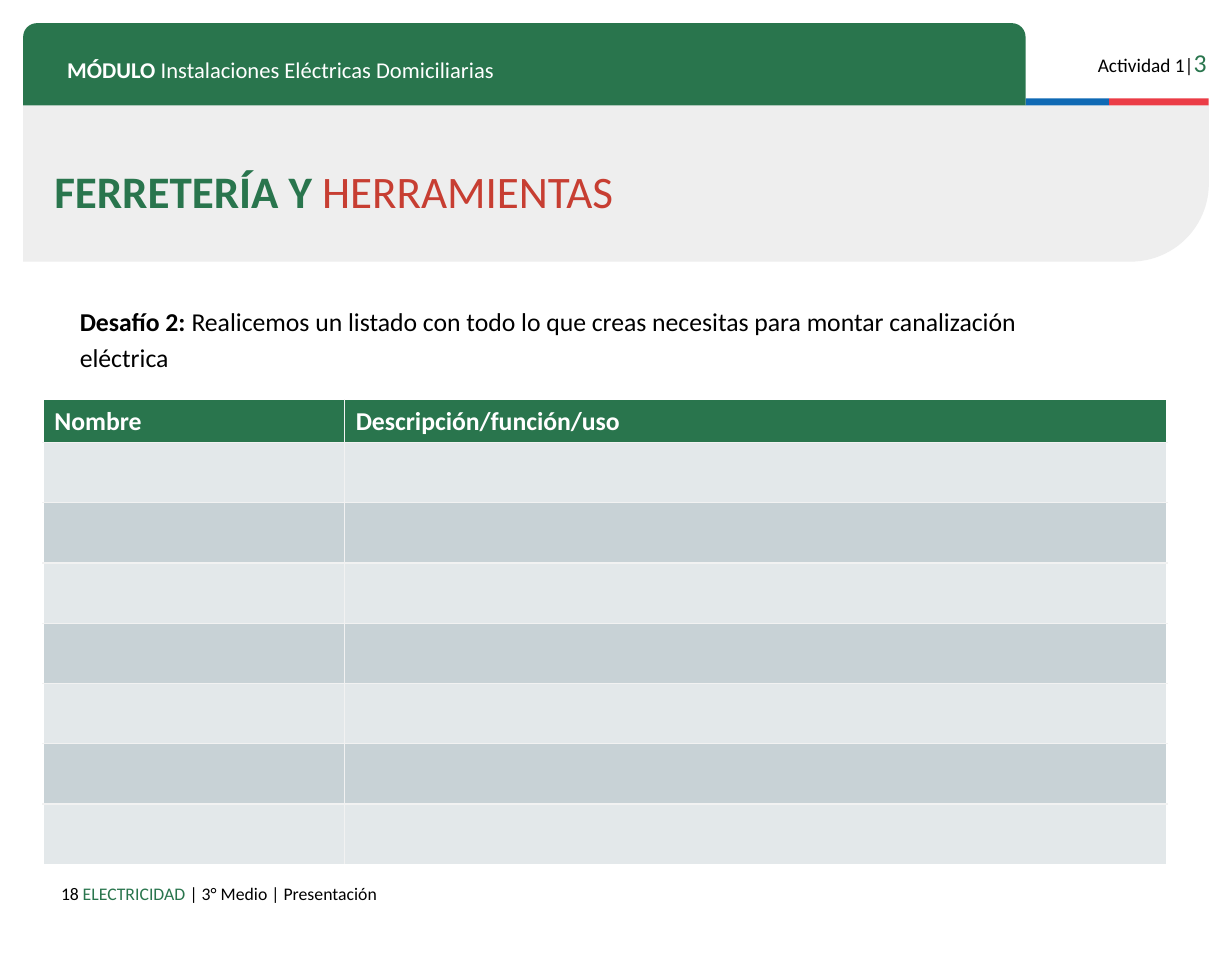
from lxml.etree import SubElement
from pptx import Presentation
from pptx.dml.color import RGBColor
from pptx.enum.shapes import MSO_SHAPE as SHAPE
from pptx.enum.text import MSO_ANCHOR as ANCHOR, PP_ALIGN as ALIGN
from pptx.oxml.ns import qn
from pptx.util import Inches, Pt

GREEN = RGBColor(0x29, 0x75, 0x4D)
RED = RGBColor(0xC7, 0x3E, 0x32)
STRIPE_BLUE = RGBColor(0x0F, 0x69, 0xB4)
STRIPE_RED = RGBColor(0xEB, 0x3C, 0x46)
PANEL = RGBColor(0xEE, 0xEE, 0xEE)
BAND_LIGHT = RGBColor(0xE3, 0xE8, 0xEA)
BAND_DARK = RGBColor(0xC8, 0xD2, 0xD6)
RULE = RGBColor(0xF2, 0xF2, 0xF2)
WHITE = RGBColor(255, 255, 255)
BLACK = RGBColor(0, 0, 0)

WIDTH, HEIGHT = Inches(10.63), Inches(8.27)
LEFT, TABLE_LEFT, FOOTER_TOP = 1.88, 3.48, 91.05
COLUMNS = (24.46, 66.79)
ROWS = (4.47,) + (6.29,) * 7
HEADINGS = ("Nombre", "Descripción/función/uso")


def col(share):
    """Turn a percentage of the slide width into a length."""
    return round(WIDTH * share / 100)


def row(share):
    """Turn a percentage of the slide height into a length."""
    return round(HEIGHT * share / 100)


def place(x, y, w, h):
    """Return left, top, width and height from percentages."""
    return col(x), row(y), col(w), row(h)


def apply(target, values):
    """Set each attribute named in a dict."""
    for name, value in values.items():
        setattr(target, name, value)


def add_run(p, text, size, color, bold=False):
    """Append a formatted run to a paragraph."""
    r = p.add_run()
    r.text = text
    apply(r.font, {"name": "Calibri", "size": Pt(size), "bold": bold})
    r.font.color.rgb = color


def add_block(s, kind, box, color, adjustments=()):
    """Draw a flat filled shape without outline."""
    sp = s.shapes.add_shape(kind, *place(*box))
    sp.shadow.inherit = False
    sp.fill.solid()
    sp.fill.fore_color.rgb = color
    sp.line.fill.background()
    for i, value in enumerate(adjustments):
        sp.adjustments[i] = value
    return sp


def add_text(s, box, runs, anchor=ANCHOR.TOP, **layout):
    """Write one paragraph of formatted runs in a text box."""
    tf = s.shapes.add_textbox(*place(*box)).text_frame
    sides = ("left", "top", "right", "bottom")
    apply(tf, {f"margin_{side}": Inches(0.1) for side in sides})
    apply(tf, {"word_wrap": True, "vertical_anchor": anchor})
    p = tf.paragraphs[0]
    apply(p, layout)
    for run in runs:
        add_run(p, *run)


def add_border(cell, side):
    """Rule one side of a cell."""
    ln = SubElement(cell._tc.get_or_add_tcPr(), qn(f"a:ln{side}"), w=str(Pt(1)))
    fill = SubElement(ln, qn("a:solidFill"))
    SubElement(fill, qn("a:srgbClr"), val=str(RULE))


def add_list_table(s):
    """Build the banded table to be filled in by students."""
    box = place(TABLE_LEFT, 41.72, sum(COLUMNS), sum(ROWS))
    table = s.shapes.add_table(len(ROWS), len(COLUMNS), *box).table
    for i, share in enumerate(COLUMNS):
        table.columns[i].width = col(share)
    for j, share in enumerate(ROWS):
        table.rows[j].height = row(share)
        for i, heading in enumerate(HEADINGS):
            cell = table.cell(j, i)
            inner = {"L": i > 0, "R": i < len(COLUMNS) - 1,
                     "T": j > 0, "B": j < len(ROWS) - 1}
            for side in (side for side, shown in inner.items() if shown):
                add_border(cell, side)
            cell.fill.solid()
            band = BAND_LIGHT if j % 2 else BAND_DARK
            cell.fill.fore_color.rgb = band if j else GREEN
            if j == 0:
                add_run(cell.text_frame.paragraphs[0], heading, 16, WHITE, True)


def add_header(s):
    """Draw the module band, the stripes and the title panel."""
    panel = add_block(s, SHAPE.ROUND_1_RECTANGLE, (LEFT, 11, 96.24, 16.32),
                      PANEL, (0.5,))
    panel._element.spPr.find(qn("a:xfrm")).set("flipV", "1")
    add_block(s, SHAPE.RECTANGLE, (83.25, 10.28, 6.78, 0.73), STRIPE_BLUE)
    add_block(s, SHAPE.RECTANGLE, (90.03, 10.28, 8.09, 0.73), STRIPE_RED)
    add_block(s, SHAPE.ROUND_2_SAME_RECTANGLE, (LEFT, 2.42, 81.37, 8.59),
              GREEN, (0.167, 0))
    add_text(s, (86.83, 3.63, 12.04, 4.59),
             [("Actividad 1|", 12, BLACK), ("3", 16, GREEN)],
             alignment=ALIGN.RIGHT)
    add_text(s, (4.52, 4.59, 76.58, 4.23),
             [("MÓDULO", 14, WHITE, True),
              (" Instalaciones Eléctricas Domiciliarias", 14, WHITE)])
    add_text(s, (TABLE_LEFT, 18.26, 92.1, 4.23),
             [("FERRETERÍA Y ", 28, GREEN, True), ("HERRAMIENTAS", 28, RED)],
             ANCHOR.MIDDLE, line_spacing=0.8)


def add_footer(s):
    """Write the page number and the course line."""
    add_text(s, (LEFT, FOOTER_TOP, 5.46, 3.51), [("18", 11, BLACK)],
             alignment=ALIGN.RIGHT)
    add_text(s, (5.79, FOOTER_TOP, 67.8, 4.59),
             [("ELECTRICIDAD ", 11, GREEN),
              ("| 3° Medio | Presentación", 11, BLACK)])


def main():
    """Build the slide and save it."""
    prs = Presentation()
    apply(prs, {"slide_width": WIDTH, "slide_height": HEIGHT})
    s = prs.slides.add_slide(prs.slide_layouts[6])
    add_header(s)
    add_footer(s)
    add_text(s, (5.55, 32.29, 84.01, 5.8),
             [("Desafío 2: ", 16, BLACK, True),
              ("Realicemos un listado con todo lo que creas necesitas "
               "para montar canalización eléctrica", 16, BLACK)],
             ANCHOR.MIDDLE, line_spacing=1.15)
    add_list_table(s)
    prs.save("out.pptx")


if __name__ == "__main__":
    main()
